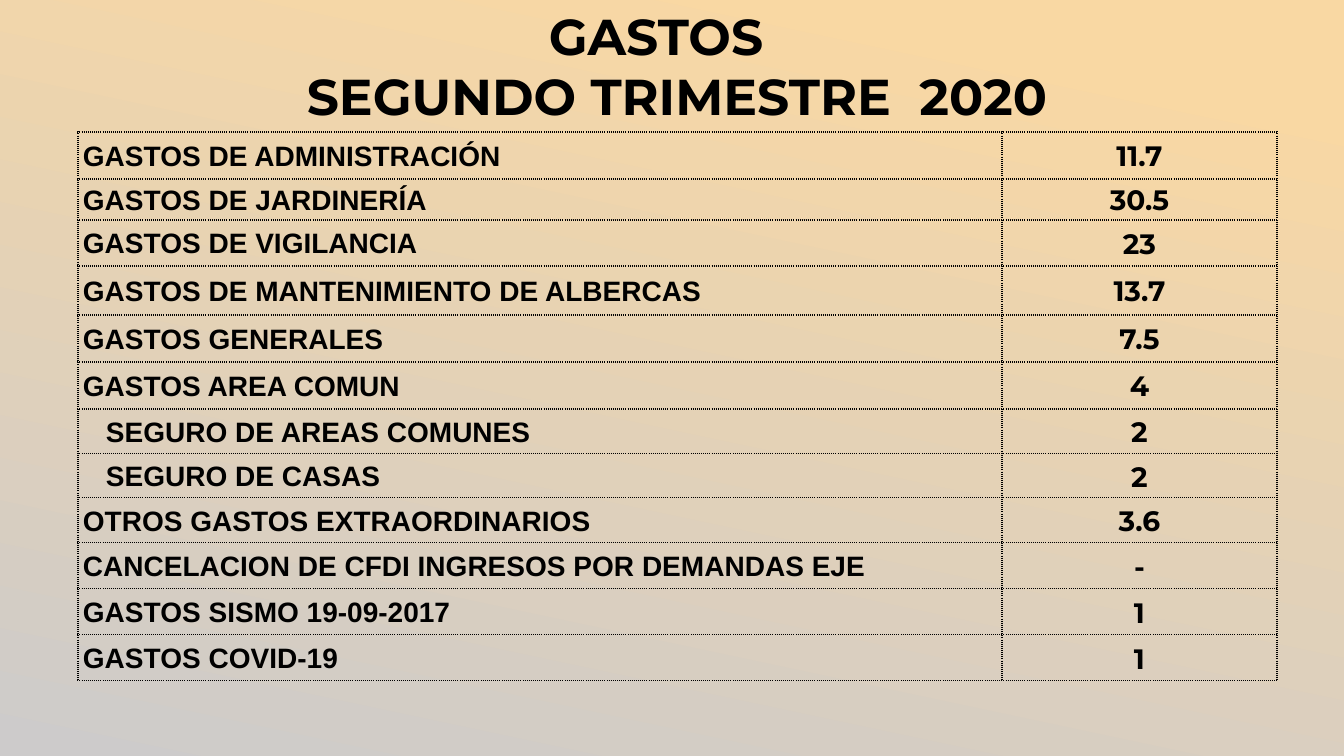
from dataclasses import dataclass

from lxml import etree
from pptx import Presentation
from pptx import util as u
from pptx.dml.color import RGBColor
from pptx.enum import text
from pptx.oxml.ns import qn

PX_PER_INCH = 100.8
BLACK = "000000"


@dataclass
class Expense:
    label: str
    share: str
    height: int
    indent: int = 0


EXPENSES = [
    Expense("GASTOS DE ADMINISTRACIÓN", "11.7", 47),
    Expense("GASTOS DE JARDINERÍA", "30.5", 41),
    Expense("GASTOS DE VIGILANCIA", "23", 46),
    Expense("GASTOS DE MANTENIMIENTO DE ALBERCAS", "13.7", 49),
    Expense("GASTOS GENERALES", "7.5", 47),
    Expense("GASTOS AREA COMUN", "4", 47),
    Expense("SEGURO DE AREAS COMUNES", "2", 45, indent=23),
    Expense("SEGURO DE CASAS", "2", 44, indent=23),
    Expense("OTROS GASTOS EXTRAORDINARIOS", "3.6", 45),
    Expense("CANCELACION DE CFDI INGRESOS POR DEMANDAS EJE", "-", 46),
    Expense("GASTOS SISMO 19-09-2017", "1", 46),
    Expense("GASTOS COVID-19", "1", 46),
]
COLUMN_WIDTHS = [924, 275]


def px(length: int) -> u.Emu:
    return u.Emu(round(length * 914400 / PX_PER_INCH))


def color(value: str) -> RGBColor:
    return RGBColor.from_string(value)


def add_run(paragraph, words: str, font_name: str, size: int) -> None:
    run = paragraph.add_run()
    run.text = words
    run.font.name = font_name
    run.font.size = u.Pt(size)
    run.font.bold = True
    run.font.color.rgb = color(BLACK)


def add_dotted_borders(cell) -> None:
    properties = cell._tc.get_or_add_tcPr()
    for index, side in enumerate(("lnL", "lnR", "lnT", "lnB")):
        line = etree.Element(qn(f"a:{side}"), w=str(u.Pt(1)))
        fill = etree.SubElement(line, qn("a:solidFill"))
        etree.SubElement(fill, qn("a:srgbClr"), val=BLACK)
        etree.SubElement(line, qn("a:prstDash"), val="dot")
        properties.insert(index, line)


def fill_cell(cell, words: str, font_name: str, alignment, indent: int = 0) -> None:
    cell.fill.background()
    add_dotted_borders(cell)
    cell.vertical_anchor = text.MSO_ANCHOR.MIDDLE
    cell.margin_left, cell.margin_right = px(5 + indent), px(5)
    cell.margin_top = cell.margin_bottom = 0
    paragraph = cell.text_frame.paragraphs[0]
    paragraph.alignment = alignment
    paragraph.line_spacing = 1.07
    add_run(paragraph, words, font_name, 20)


def add_title(slide) -> None:
    title = slide.shapes.title
    title.left, title.top, title.width, title.height = map(px, (246, 0, 820, 132))
    frame = title.text_frame
    frame.auto_size = text.MSO_AUTO_SIZE.NONE
    frame.word_wrap = True
    frame.vertical_anchor = text.MSO_ANCHOR.TOP
    frame.margin_left = frame.margin_right = 0
    first, second = frame.paragraphs[0], frame.add_paragraph()
    # The second line is centred a little to the right of the first
    second._p.get_or_add_pPr().set("marL", str(px(42)))
    for paragraph, words in ((first, "GASTOS"), (second, "SEGUNDO TRIMESTRE  2020")):
        paragraph.alignment = text.PP_ALIGN.CENTER
        add_run(paragraph, words, "Montserrat", 36)


def add_expense_table(slide) -> None:
    height = sum(expense.height for expense in EXPENSES)
    frame = slide.shapes.add_table(len(EXPENSES), len(COLUMN_WIDTHS), px(78), px(132),
                                   px(sum(COLUMN_WIDTHS)), px(height))
    table = frame.table
    table.first_row = table.horz_banding = False
    for column, width in zip(table.columns, COLUMN_WIDTHS):
        column.width = px(width)
    for row, expense in zip(table.rows, EXPENSES):
        row.height = px(expense.height)
        label, share = row.cells
        fill_cell(label, expense.label, "Arial", text.PP_ALIGN.LEFT, expense.indent)
        fill_cell(share, expense.share, "Montserrat", text.PP_ALIGN.CENTER)


def set_background(slide) -> None:
    fill = slide.background.fill
    fill.gradient()
    fill.gradient_angle = 258
    for stop, (position, value) in zip(fill.gradient_stops, ((0.1, "F9D8A3"), (1, "CDCBCB"))):
        stop.position = position
        stop.color.rgb = color(value)


def main() -> None:
    presentation = Presentation()
    presentation.slide_width, presentation.slide_height = px(1344), px(756)
    slide = presentation.slides.add_slide(presentation.slide_layouts[5])
    set_background(slide)
    add_title(slide)
    add_expense_table(slide)
    presentation.save("out.pptx")


if __name__ == "__main__":
    main()
